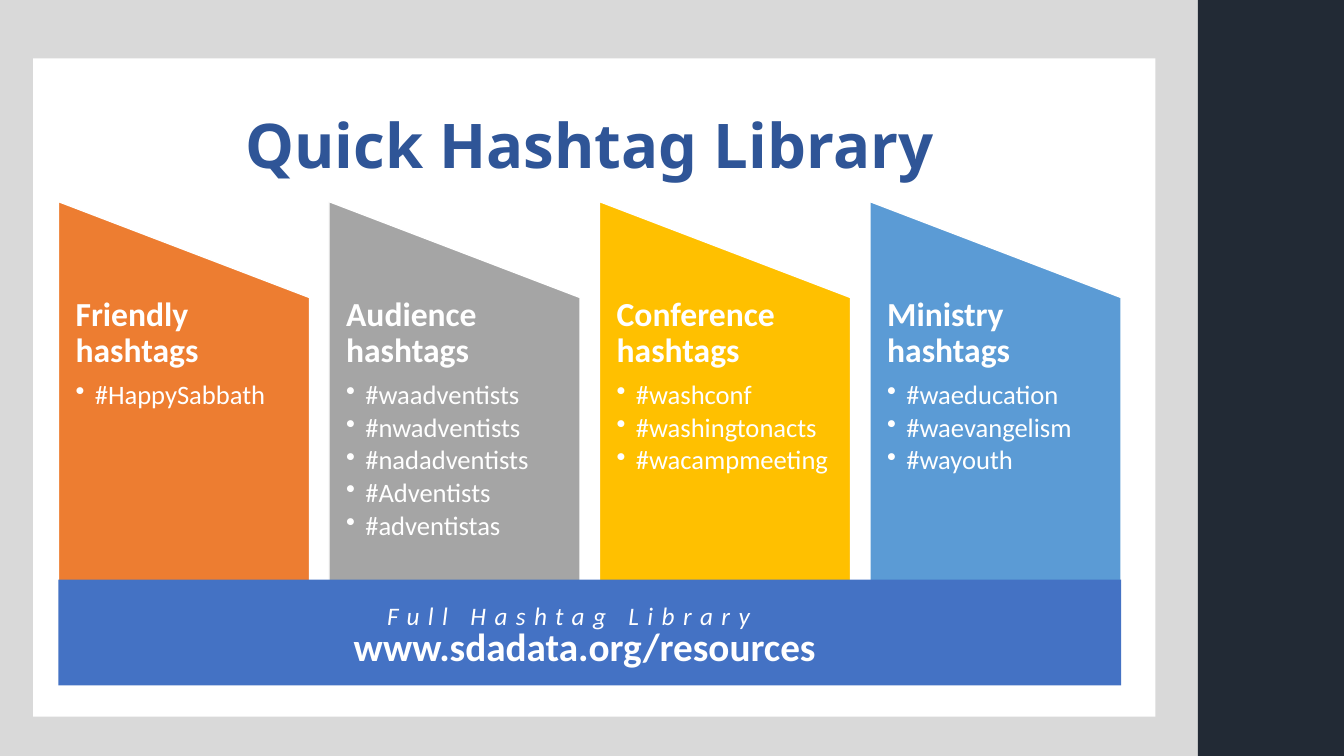
from lxml.etree import SubElement
from pptx import Presentation
from pptx.dml.color import RGBColor
from pptx.enum.shapes import MSO_SHAPE
from pptx.enum.text import MSO_ANCHOR, PP_ALIGN
from pptx.oxml.ns import qn
from pptx.util import Inches, Pt

WHITE = RGBColor(0xFF, 0xFF, 0xFF)
LIGHT_GRAY = RGBColor(0xD9, 0xD9, 0xD9)
NAVY = RGBColor(0x22, 0x2A, 0x35)
TITLE_BLUE = RGBColor(0x2F, 0x55, 0x97)
BAND_BLUE = RGBColor(0x44, 0x72, 0xC4)
ORANGE = RGBColor(0xED, 0x7D, 0x31)
GRAY = RGBColor(0xA5, 0xA5, 0xA5)
GOLD = RGBColor(0xFF, 0xC0, 0x00)
SKY_BLUE = RGBColor(0x5B, 0x9B, 0xD5)

SLIDE_WIDTH, SLIDE_HEIGHT = 13.33, 7.5
SIDEBAR_LEFT = 11.88
CONTENT_LEFT, CONTENT_WIDTH = 0.58, 10.54
COLUMN_WIDTH, COLUMN_PITCH = 2.49, 2.683
PANEL_TOP, PANEL_HEIGHT = 2.0, 4.76
LIST_TOP, LIST_HEIGHT = 2.95, 2.86
BULLET_INDENT = Inches(0.19)

COLUMNS = [
    (ORANGE, "Friendly hashtags", ["#HappySabbath"]),
    (GRAY, "Audience hashtags",
     ["#waadventists", "#nwadventists", "#nadadventists", "#Adventists", "#adventistas"]),
    (GOLD, "Conference hashtags", ["#washconf", "#washingtonacts", "#wacampmeeting"]),
    (SKY_BLUE, "Ministry hashtags", ["#waeducation", "#waevangelism", "#wayouth"]),
]

deck = Presentation()
deck.slide_width, deck.slide_height = Inches(SLIDE_WIDTH), Inches(SLIDE_HEIGHT)
page = deck.slides.add_slide(deck.slide_layouts[6])


def add_block(preset, left, top, width, height, color):
    block = page.shapes.add_shape(
        preset, Inches(left), Inches(top), Inches(width), Inches(height))
    block.shadow.inherit = False
    block.fill.solid()
    block.fill.fore_color.rgb = color
    block.line.fill.background()
    return block


def add_text(left, top, width, height, text, size, color=WHITE, font="Calibri", bold=True):
    """Add a wrapped text box and return it with its first paragraph formatted."""
    box = page.shapes.add_textbox(Inches(left), Inches(top), Inches(width), Inches(height))
    box.text_frame.word_wrap = True
    para = box.text_frame.paragraphs[0]
    para.text = text
    span = para.runs[0]
    span.font.name, span.font.size, span.font.bold = font, Pt(size), bold
    span.font.color.rgb = color
    return box, para


# Background and title
add_block(MSO_SHAPE.RECTANGLE, 0, 0, SIDEBAR_LEFT, SLIDE_HEIGHT, LIGHT_GRAY)
add_block(MSO_SHAPE.RECTANGLE, 0.33, 0.58, 11.13, 6.53, WHITE)
add_block(MSO_SHAPE.RECTANGLE, SIDEBAR_LEFT, 0, SLIDE_WIDTH - SIDEBAR_LEFT, SLIDE_HEIGHT, NAVY)
title, title_para = add_text(CONTENT_LEFT, 0.84, CONTENT_WIDTH, 1.26,
                             "Quick Hashtag Library", 44, TITLE_BLUE, "Noto Sans")
title.text_frame.vertical_anchor = MSO_ANCHOR.MIDDLE
title_para.alignment = PP_ALIGN.CENTER
title_para.line_spacing = 0.9

# Slanted panels, each a trapezoid turned on its side
for index, (color, heading, hashtags) in enumerate(COLUMNS):
    left = CONTENT_LEFT + index * COLUMN_PITCH
    turn_offset = (PANEL_HEIGHT - COLUMN_WIDTH) / 2
    panel = add_block(MSO_SHAPE.FLOWCHART_MANUAL_OPERATION, left - turn_offset,
                      PANEL_TOP + turn_offset, PANEL_HEIGHT, COLUMN_WIDTH, color)
    panel.rotation = 270
    panel.line.color.rgb = WHITE
    panel.line.width = Pt(1)

    box, heading_para = add_text(left, LIST_TOP, COLUMN_WIDTH, LIST_HEIGHT, heading, 24)
    frame = box.text_frame
    frame.margin_left = frame.margin_right = Inches(0.17)
    frame.margin_top = frame.margin_bottom = 0
    heading_para.line_spacing = 0.9
    heading_para.space_after = Pt(8.4)
    for hashtag in hashtags:
        para = frame.add_paragraph()
        para.text = hashtag
        para.level = 1
        para.line_spacing = 0.9
        para.space_after = Pt(2.8)
        properties = para._p.get_or_add_pPr()
        properties.set("marL", str(BULLET_INDENT))
        properties.set("indent", str(-BULLET_INDENT))
        SubElement(properties, qn("a:buChar"), char="•")
        span = para.runs[0]
        span.font.name, span.font.size, span.font.bold = "Calibri", Pt(19), False
        span.font.color.rgb = WHITE

# Footer band
add_block(MSO_SHAPE.RECTANGLE, CONTENT_LEFT, 5.75, CONTENT_WIDTH, 1.05, BAND_BLUE)
add_text(3.41, 6.12, 5.07, 0.57, "www.sdadata.org/resources", 28)
_, caption = add_text(3.74, 5.91, 4.55, 0.4, "Full Hashtag Library", 18, bold=False)
caption.runs[0].font.italic = True
caption.runs[0]._r.get_or_add_rPr().set("spc", "600")

deck.save("out.pptx")
